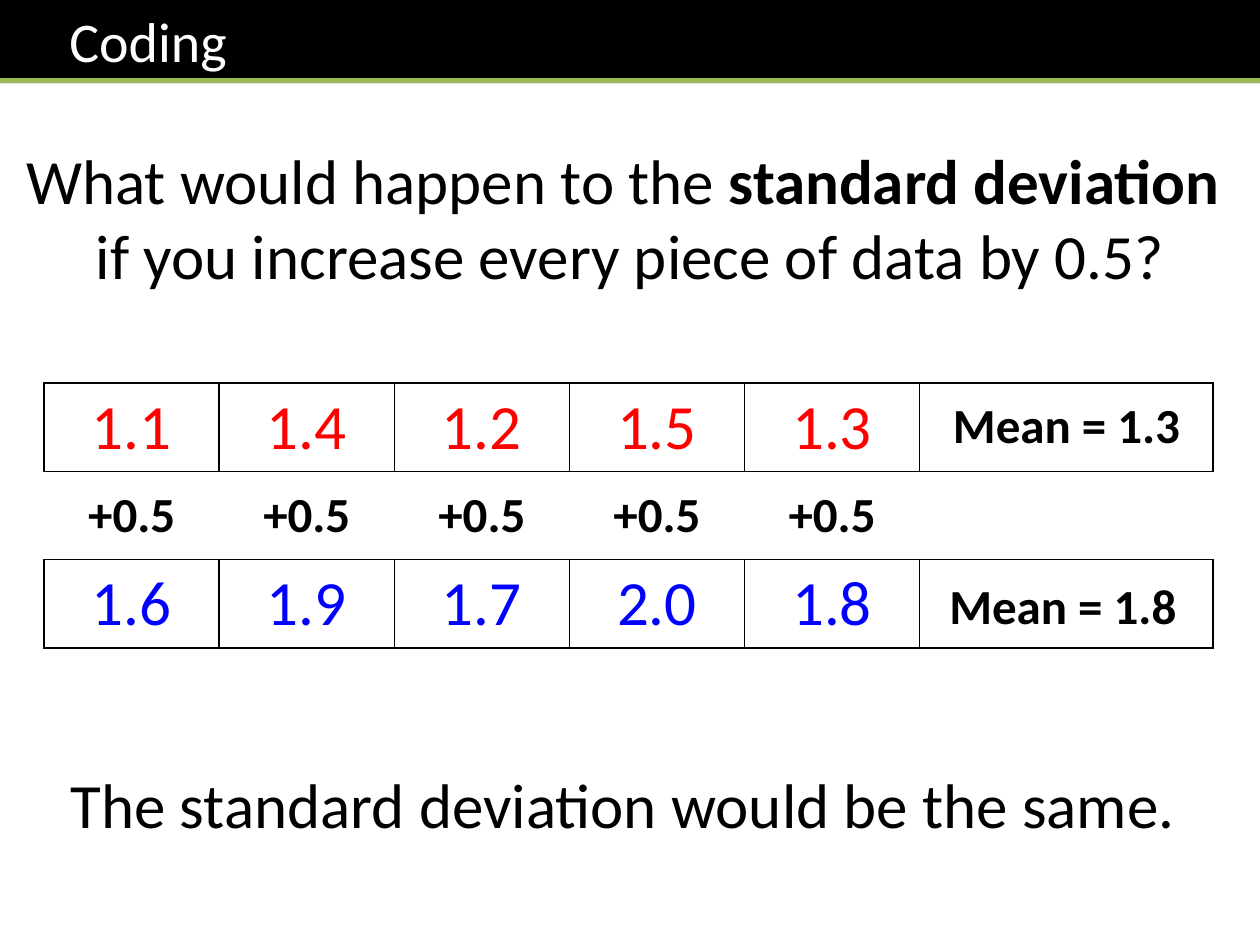
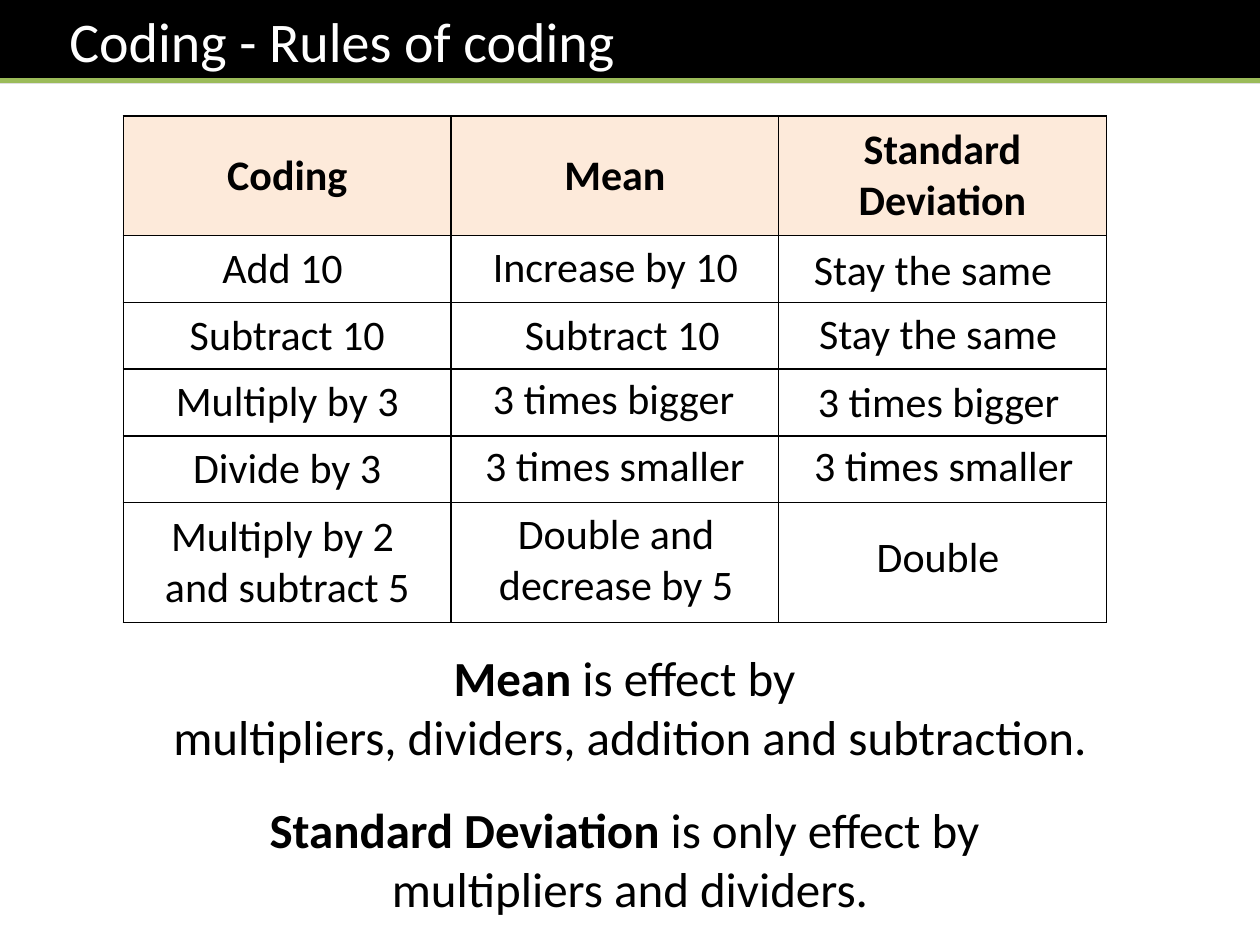
from lxml import etree
from pptx import Presentation
from pptx import util as u
from pptx.dml.color import RGBColor
from pptx.enum import shapes, text
from pptx.oxml.ns import qn

FONT = "Calibri"
BLACK, WHITE, GREEN = "000000", "FFFFFF", "9BBB59"
RED, BLUE, PEACH = "FF0000", "0000FF", "FDEADA"


def rgb(value):
    return RGBColor.from_string(value)


def set_borders(cell, sides):
    """Draw a thin black line on the named sides (L, R, T, B) and none on the others."""
    properties = cell._tc.get_or_add_tcPr()
    for side in "LRTB":
        line = etree.SubElement(properties, qn(f"a:ln{side}"), w=str(u.Pt(1)))
        if side in sides:
            fill = etree.SubElement(line, qn("a:solidFill"))
            etree.SubElement(fill, qn("a:srgbClr"), val=BLACK)
        else:
            etree.SubElement(line, qn("a:noFill"))


class Lesson:
    def __init__(self):
        self.deck = Presentation()
        self.deck.slide_width, self.deck.slide_height = u.Inches(10), u.Inches(7.5)
        self.page = None

    def add_lines(self, frame, lines, size, color=BLACK, bold=False,
                  align=text.PP_ALIGN.CENTER):
        """Fill a frame with lines; a line is a string or a list of (words, bold) pairs."""
        for index, line in enumerate(lines):
            para = frame.add_paragraph() if index else frame.paragraphs[0]
            para.alignment = align
            for words, heavy in [(line, bold)] if isinstance(line, str) else line:
                span = para.add_run()
                span.text = words
                span.font.name, span.font.size = FONT, u.Pt(size)
                span.font.bold = heavy
                span.font.color.rgb = rgb(color)

    def start_page(self, heading):
        """Add a slide with the black title band and its green rule."""
        self.page = self.deck.slides.add_slide(self.deck.slide_layouts[5])
        title = self.page.shapes.title
        title.left, title.top = u.Inches(0), u.Inches(0)
        title.width, title.height = u.Inches(10), u.Inches(0.66)
        title.fill.solid()
        title.fill.fore_color.rgb = rgb(BLACK)
        frame = title.text_frame
        frame.auto_size = text.MSO_AUTO_SIZE.NONE
        frame.vertical_anchor = text.MSO_ANCHOR.TOP
        frame.margin_left = u.Inches(0.55)
        self.add_lines(frame, [heading], 32, WHITE, align=text.PP_ALIGN.LEFT)
        rule = self.page.shapes.add_connector(
            shapes.MSO_CONNECTOR.STRAIGHT, *map(u.Inches, (0, 0.64, 10, 0.64)))
        rule.line.color.rgb = rgb(GREEN)
        rule.line.width = u.Pt(3)
        etree.SubElement(rule._element.spPr, qn("a:effectLst"))

    def text_box(self, place, lines, size, bold=False, wrap=True):
        box = self.page.shapes.add_textbox(*map(u.Inches, place))
        box.text_frame.word_wrap = wrap
        self.add_lines(box.text_frame, lines, size, bold=bold)

    def table(self, left, top, widths, heights):
        frame = self.page.shapes.add_table(
            len(heights), len(widths),
            *map(u.Inches, (left, top, sum(widths), sum(heights))))
        grid = frame.table
        grid.first_row = grid.horz_banding = False
        for column, width in zip(grid.columns, widths):
            column.width = u.Inches(width)
        for row, height in zip(grid.rows, heights):
            row.height = u.Inches(height)
        return grid

    def cell(self, grid, row, column, lines, size, color=BLACK, bold=False,
             fill=None, sides="LRTB"):
        cell = grid.cell(row, column)
        cell.vertical_anchor = text.MSO_ANCHOR.MIDDLE
        set_borders(cell, sides)
        if fill:
            cell.fill.solid()
            cell.fill.fore_color.rgb = rgb(fill)
        else:
            cell.fill.background()
        self.add_lines(cell.text_frame, lines, size, color, bold)


def add_question(lesson):
    lesson.start_page("Coding")
    lesson.text_box((0, 1.07, 10, 1.31), [
        [("What would happen to the ", False), ("standard deviation ", True)],
        "if you increase every piece of data by 0.5?"], 36)
    lesson.text_box((-0.02, 6.03, 10.04, 0.71),
                    ["The standard deviation would be the same. "], 36)

    data = [1.1, 1.4, 1.2, 1.5, 1.3]
    step = 0.5
    grid = lesson.table(0.35, 3.04, [1.39] * 5 + [2.33], [0.7] * 3)
    for column, value in enumerate(data):
        lesson.cell(grid, 0, column, [f"{value:.1f}"], 36, RED)
        lesson.cell(grid, 1, column, [f"+{step}"], 28, bold=True, sides="TB")
        lesson.cell(grid, 2, column, [f"{value + step:.1f}"], 36, BLUE)
    lesson.cell(grid, 0, 5, ["Mean = 1.3"], 28, bold=True)
    lesson.cell(grid, 1, 5, [], 28, sides="TB")
    lesson.cell(grid, 2, 5, [], 28)
    lesson.text_box((7.42, 4.52, 2.03, 0.57), ["Mean = 1.8"], 28, bold=True, wrap=False)


def add_rules(lesson):
    lesson.start_page("Coding - Rules of coding")
    lesson.text_box((0, 5.09, 10, 1.04), [
        [("Mean", True), (" is effect by ", False)],
        "multipliers, dividers, addition and subtraction."], 28)
    lesson.text_box((0, 6.3, 10, 1.04), [
        [("Standard Deviation ", True), ("is only effect by ", False)],
        "multipliers and dividers."], 28)

    grid = lesson.table(0.98, 0.92, [2.6] * 3, [0.95] + [0.53] * 4 + [0.95])
    for column, heading in enumerate(["Coding", "Mean", "Standard Deviation"]):
        lesson.cell(grid, 0, column, [heading], 24, bold=True, fill=PEACH)
    codings = [["Add 10 "], ["Subtract 10"], ["Multiply by 3"], ["Divide by 3"],
               ["Multiply by 2 ", "and subtract 5"]]
    for row, coding in enumerate(codings, 1):
        for column, lines in enumerate([coding, [], []]):
            lesson.cell(grid, row, column, lines, 24, fill=WHITE)

    answers = [
        ("Increase by 10", 3.8, 1.86, 2.17),
        ("Subtract 10", 4.06, 2.4, 1.76),
        ("3 times bigger", 3.8, 2.91, 2.14),
        ("3 times smaller", 3.74, 3.44, 2.28),
        ("Stay the same", 6.35, 1.88, 2.11),
        ("Stay the same", 6.39, 2.39, 2.11),
        ("3 times bigger", 6.38, 2.93, 2.14),
        ("3 times smaller", 6.35, 3.44, 2.28),
        ("Double", 6.85, 4.16, 1.19),
    ]
    for answer, left, top, width in answers:
        lesson.text_box((left, top, width, 0.5), [answer], 24, wrap=False)
    lesson.text_box((3.8, 3.98, 2.18, 0.91), ["Double and decrease by 5"], 24)


def main():
    lesson = Lesson()
    add_question(lesson)
    add_rules(lesson)
    lesson.deck.save("out.pptx")


if __name__ == "__main__":
    main()
